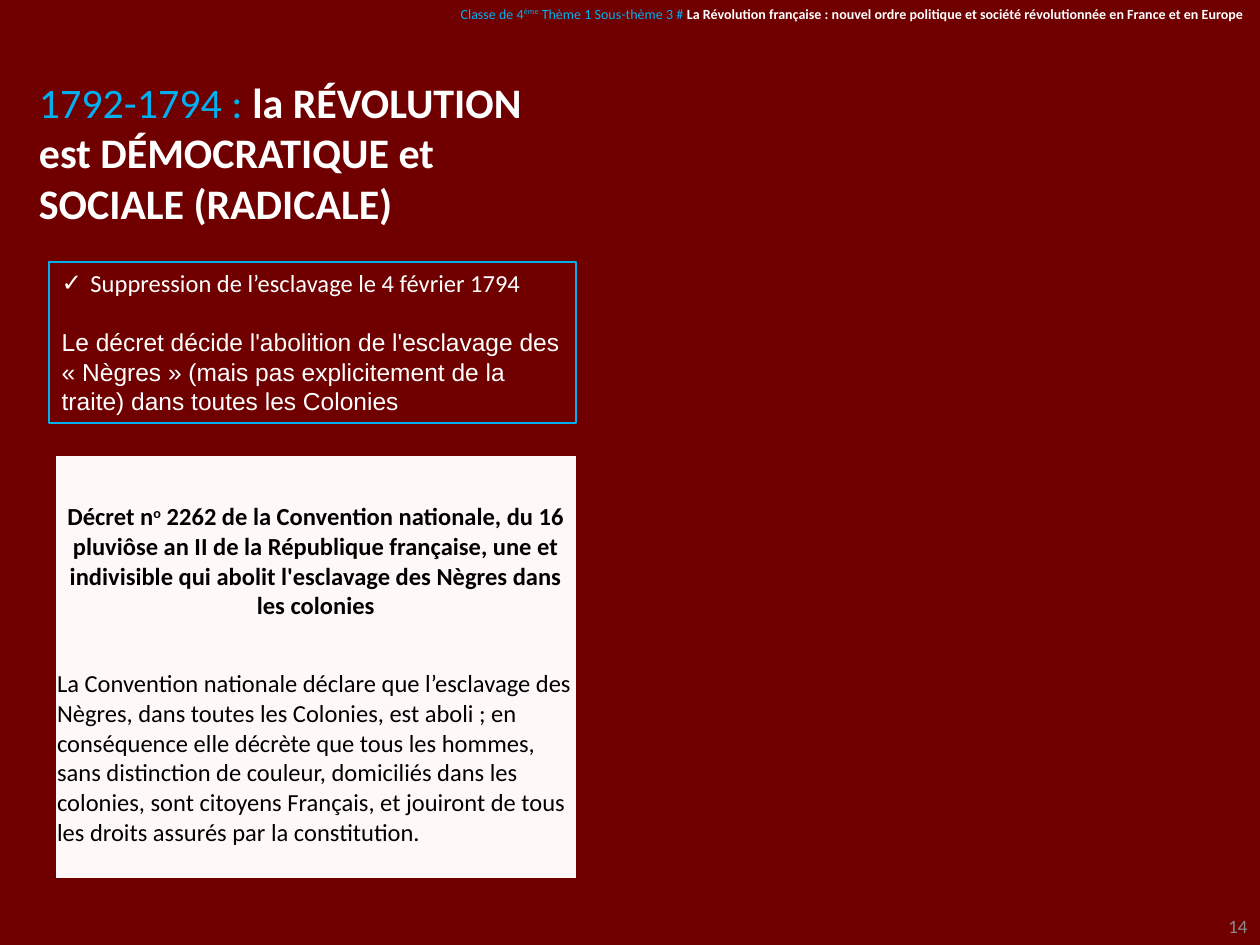
from dataclasses import dataclass

from lxml import etree
from pptx import Presentation
from pptx.dml.color import RGBColor
from pptx.enum.text import MSO_ANCHOR, MSO_AUTO_SIZE, PP_ALIGN
from pptx.oxml.ns import qn
from pptx.util import Cm, Pt

MIDDLE, TOP = MSO_ANCHOR.MIDDLE, MSO_ANCHOR.TOP
LEFT, CENTER, RIGHT = PP_ALIGN.LEFT, PP_ALIGN.CENTER, PP_ALIGN.RIGHT
NO_AUTOFIT = MSO_AUTO_SIZE.NONE


@dataclass(frozen=True)
class Theme:
    background: RGBColor = RGBColor(0x70, 0x00, 0x00)
    accent: RGBColor = RGBColor(0x00, 0xB0, 0xF0)
    light: RGBColor = RGBColor(0xFF, 0xFF, 0xFF)
    dark: RGBColor = RGBColor(0x00, 0x00, 0x00)
    muted: RGBColor = RGBColor(0x8C, 0x8C, 0x8C)
    paper: RGBColor = RGBColor(0xFF, 0xF8, 0xF8)
    title_size: int = 24
    body_size: int = 14
    header_size: int = 8
    number_size: float = 10.8


THEME = Theme()


def write(paragraph, text, *, size=THEME.body_size, color=THEME.light,
          bold=False, font="Calibri", superscript=False):
    """Append one formatted run to the paragraph."""
    run = paragraph.add_run()
    run.text = text
    run.font.size = Pt(size)
    run.font.name = font
    run.font.bold = bold
    run.font.color.rgb = color
    if superscript:
        run.font._element.set("baseline", "30000")


def place(shape, left, top, width, height, anchor):
    """Set position and size in centimetres, and return the text frame."""
    shape.left, shape.top = Cm(left), Cm(top)
    shape.width, shape.height = Cm(width), Cm(height)
    frame = shape.text_frame
    frame.word_wrap = True
    frame.auto_size = NO_AUTOFIT
    frame.vertical_anchor = anchor
    return frame


prs = Presentation()
prs.slide_width, prs.slide_height = Cm(25.4), Cm(19.05)
slide = prs.slides.add_slide(prs.slide_layouts[1])
slide.background.fill.solid()
slide.background.fill.fore_color.rgb = THEME.background

# Slide number
number_box = slide.shapes.add_textbox(0, 0, 0, 0)
number = place(number_box, 20.07, 18.29, 5.33, 0.76, MIDDLE).paragraphs[0]
number.alignment = RIGHT
write(number, "14", size=THEME.number_size, color=THEME.muted)

# Course header
header_box = slide.shapes.add_textbox(0, 0, 0, 0)
header = place(header_box, 0, 0, 25.4, 0.94, TOP).paragraphs[0]
header.alignment = RIGHT
header.line_spacing = 0.97
for text, raised in [("Classe de 4", False), ("ème", True),
                     (" Thème 1 Sous-thème 3 # ", False)]:
    write(header, text, size=THEME.header_size, color=THEME.accent, superscript=raised)
write(header, "La Révolution française : nouvel ordre politique et société "
      "révolutionnée en France et en Europe ", size=THEME.header_size, bold=True)

# Title
title = place(slide.shapes.title, 0.53, 1.4, 10.62, 3.33, MIDDLE).paragraphs[0]
title.alignment = LEFT
write(title, "1792-1794 : ", size=THEME.title_size, color=THEME.accent)
write(title, "la RÉVOLUTION est DÉMOCRATIQUE et SOCIALE (RADICALE)",
      size=THEME.title_size, bold=True)

# Framed summary of the abolition
summary_box = slide.placeholders[1]
summary = place(summary_box, 0.99, 5.28, 10.62, 3.25, TOP)
summary_box.line.color.rgb = THEME.accent
summary_box.line.width = Pt(1)

measure = summary.paragraphs[0]
explanation = summary.add_paragraph()
for paragraph, bullet, hang, gap in [(measure, "✓", Cm(0.58), 0),
                                     (explanation, None, 0, 17)]:
    properties = paragraph._p.get_or_add_pPr()
    properties.set("marL", str(hang))
    properties.set("indent", str(-hang))
    if bullet:
        etree.SubElement(properties, qn("a:buChar")).set("char", bullet)
    else:
        etree.SubElement(properties, qn("a:buNone"))
    paragraph.space_before = Pt(gap)
write(measure, "Suppression de l’esclavage le 4 février 1794")
write(explanation, "Le décret décide l'abolition de l'esclavage des « Nègres » "
      "(mais pas explicitement de la traite) dans toutes les Colonies", font="Arial")

# Decree
decree = slide.shapes.add_table(2, 1, Cm(1.12), Cm(9.19), Cm(10.49), Cm(8.48)).table
heading_cell, article_cell = decree.cell(0, 0), decree.cell(1, 0)
for row, height in zip(decree.rows, (4.27, 4.21)):
    row.height = Cm(height)
for cell in (heading_cell, article_cell):
    cell.fill.solid()
    cell.fill.fore_color.rgb = THEME.paper
    cell.vertical_anchor = MIDDLE
    cell.margin_left = cell.margin_right = Cm(0.03)
    cell.margin_top = cell.margin_bottom = Cm(0.03)
    borders = cell._tc.get_or_add_tcPr()
    for position, side in enumerate(("a:lnL", "a:lnR", "a:lnT", "a:lnB")):
        border = etree.Element(qn(side), w="0")
        etree.SubElement(border, qn("a:noFill"))
        borders.insert(position, border)
article_cell.margin_bottom = Cm(0.6)

heading = heading_cell.text_frame.paragraphs[0]
heading.alignment = CENTER
for text, raised in [
    ("Décret n", False),
    ("o", True),
    (" 2262 de la Convention nationale, du 16 pluviôse an II de la République "
     "française, une et indivisible qui abolit l'esclavage des Nègres dans "
     "les colonies", False),
]:
    write(heading, text, color=THEME.dark, bold=True, superscript=raised)

write(article_cell.text_frame.paragraphs[0],
      "La Convention nationale déclare que l’esclavage des Nègres, dans toutes les "
      "Colonies, est aboli ; en conséquence elle décrète que tous les hommes, sans "
      "distinction de couleur, domiciliés dans les colonies, sont citoyens Français, "
      "et jouiront de tous les droits assurés par la constitution.", color=THEME.dark)

prs.save("out.pptx")
